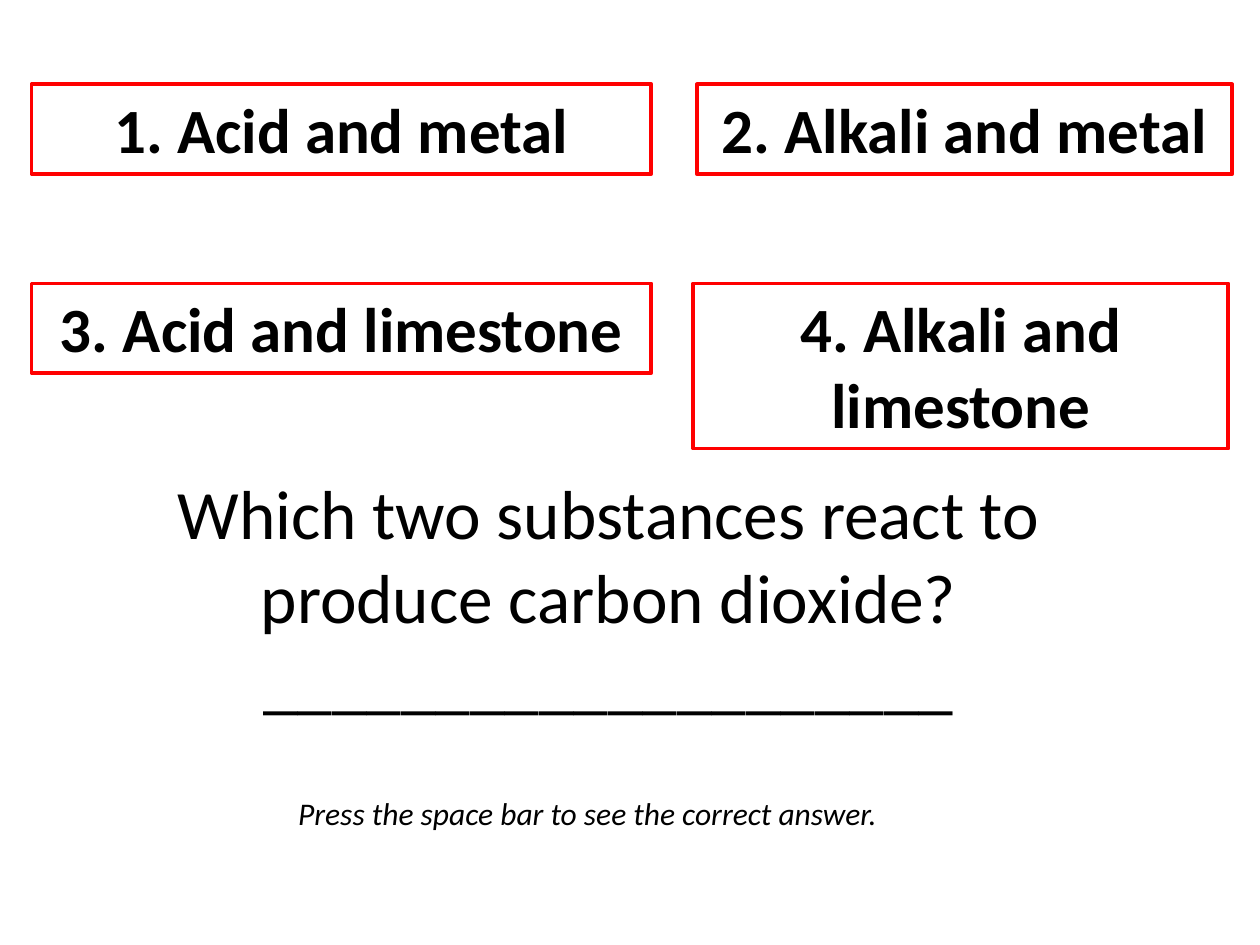
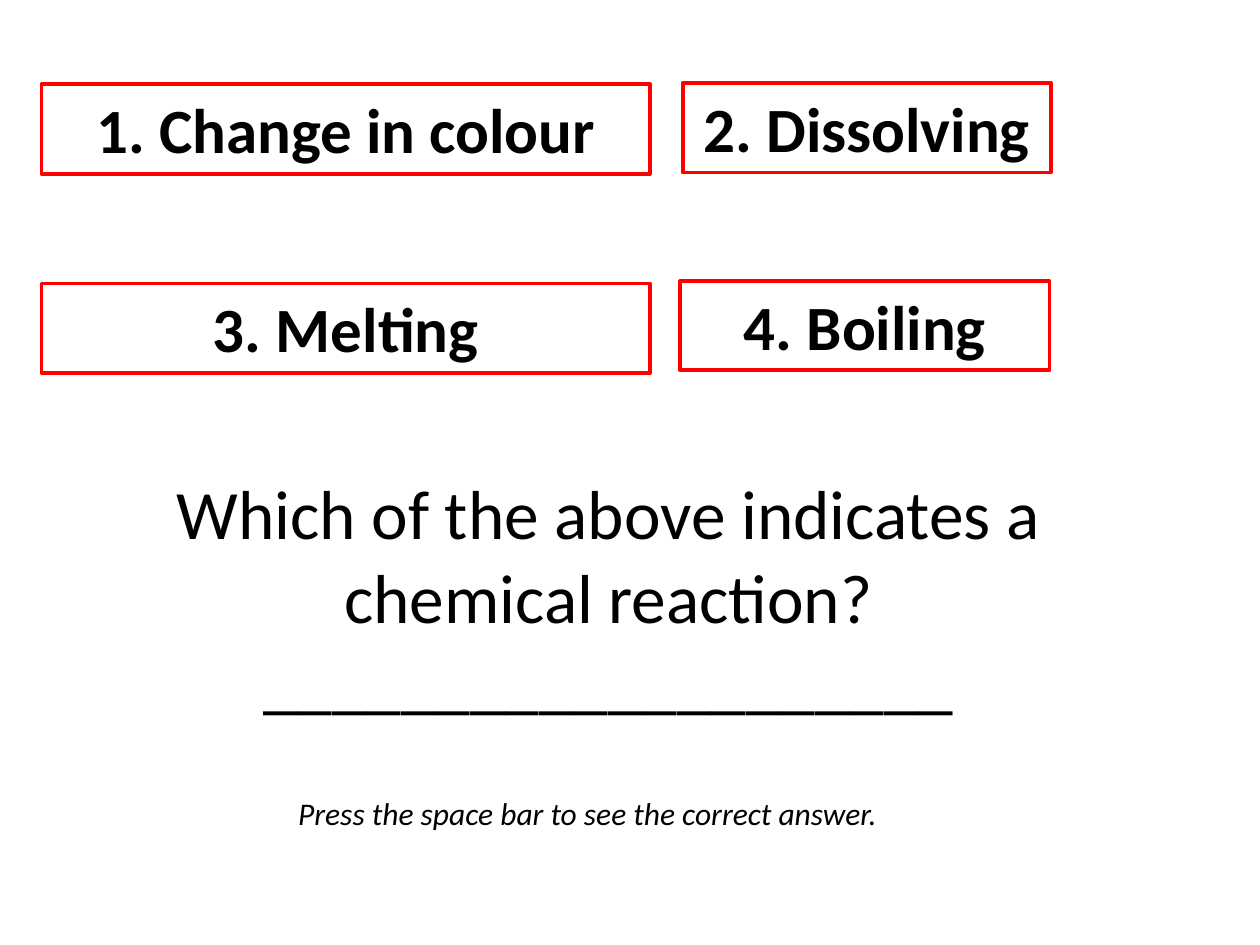
import pptx
import pptx.util
import pptx.dml.color
import pptx.enum.shapes
import pptx.enum.text

SLIDE_WIDTH, SLIDE_HEIGHT = 10, 7.5
COLOURS = {"text": "000000", "border": "FF0000"}
FONT = "Calibri"
ANSWER_LINE = "_" * 20
HINT = "Press the space bar to see the correct answer."
QUESTION_AREA = (0.58, 3.92, 8.5, 1.61)
HINT_AREA = (1.25, 6.25, 6.83, 0.4)
ROW_TOPS = (0.67, 2.25)
PADDING, LINE_HEIGHT = 0.11, 0.6

# Each option: text, left, width, number of text lines, shift from its row's top.
QUIZZES = [
    {
        "question": "Which two substances react to produce carbon dioxide?",
        "options": [
            ("Acid and metal", 0.25, 4.92, 1, 0),
            ("Alkali and metal", 5.53, 4.25, 1, 0),
            ("Acid and limestone", 0.25, 4.92, 1, 0),
            ("Alkali and limestone", 5.5, 4.25, 2, 0),
        ],
    },
    {
        "question": "Which of the above indicates a chemical reaction?",
        "options": [
            ("Change in colour", 0.33, 4.83, 1, 0),
            ("Dissolving", 5.42, 2.92, 1, -0.01),
            ("Melting", 0.33, 4.83, 1, 0),
            ("Boiling", 5.4, 2.93, 1, -0.02),
        ],
    },
]


def colour(name):
    return pptx.dml.color.RGBColor.from_string(COLOURS[name])


def inches(area):
    return [pptx.util.Inches(length) for length in area]


def write_text(shape, lines, size, anchor, bold=False, italic=False):
    frame = shape.text_frame
    frame.word_wrap = True
    frame.auto_size = pptx.enum.text.MSO_AUTO_SIZE.NONE
    frame.vertical_anchor = anchor
    paragraph = frame.paragraphs[0]
    paragraph.alignment = pptx.enum.text.PP_ALIGN.CENTER
    for index, line in enumerate(lines):
        if index:
            paragraph.add_line_break()
        run = paragraph.add_run()
        run.text = line
        run.font.name = FONT
        run.font.size = pptx.util.Pt(size)
        run.font.bold = bold
        run.font.italic = italic
        run.font.color.rgb = colour("text")


def add_question(slide, question):
    title = slide.shapes.title
    title.left, title.top, title.width, title.height = inches(QUESTION_AREA)
    write_text(title, [question, ANSWER_LINE], 39.6, pptx.enum.text.MSO_ANCHOR.MIDDLE)


def add_option(slide, index, option):
    text, left, width, line_count, shift = option
    top = ROW_TOPS[index // 2] + shift
    height = PADDING + line_count * LINE_HEIGHT
    shape = slide.shapes.add_shape(
        pptx.enum.shapes.MSO_SHAPE.RECTANGLE, *inches((left, top, width, height)))
    shape.shadow.inherit = False
    shape.fill.background()
    shape.line.color.rgb = colour("border")
    shape.line.width = pptx.util.Pt(2.25)
    write_text(shape, [f"{index + 1}. {text}"], 36, pptx.enum.text.MSO_ANCHOR.TOP, bold=True)


def add_hint(slide):
    shape = slide.shapes.add_textbox(*inches(HINT_AREA))
    write_text(shape, [HINT], 18, pptx.enum.text.MSO_ANCHOR.TOP, italic=True)


def main():
    presentation = pptx.Presentation()
    presentation.slide_width = pptx.util.Inches(SLIDE_WIDTH)
    presentation.slide_height = pptx.util.Inches(SLIDE_HEIGHT)
    for quiz in QUIZZES:
        slide = presentation.slides.add_slide(presentation.slide_layouts[5])
        add_question(slide, quiz["question"])
        for index, option in enumerate(quiz["options"]):
            add_option(slide, index, option)
        add_hint(slide)
    presentation.save("out.pptx")


if __name__ == "__main__":
    main()
